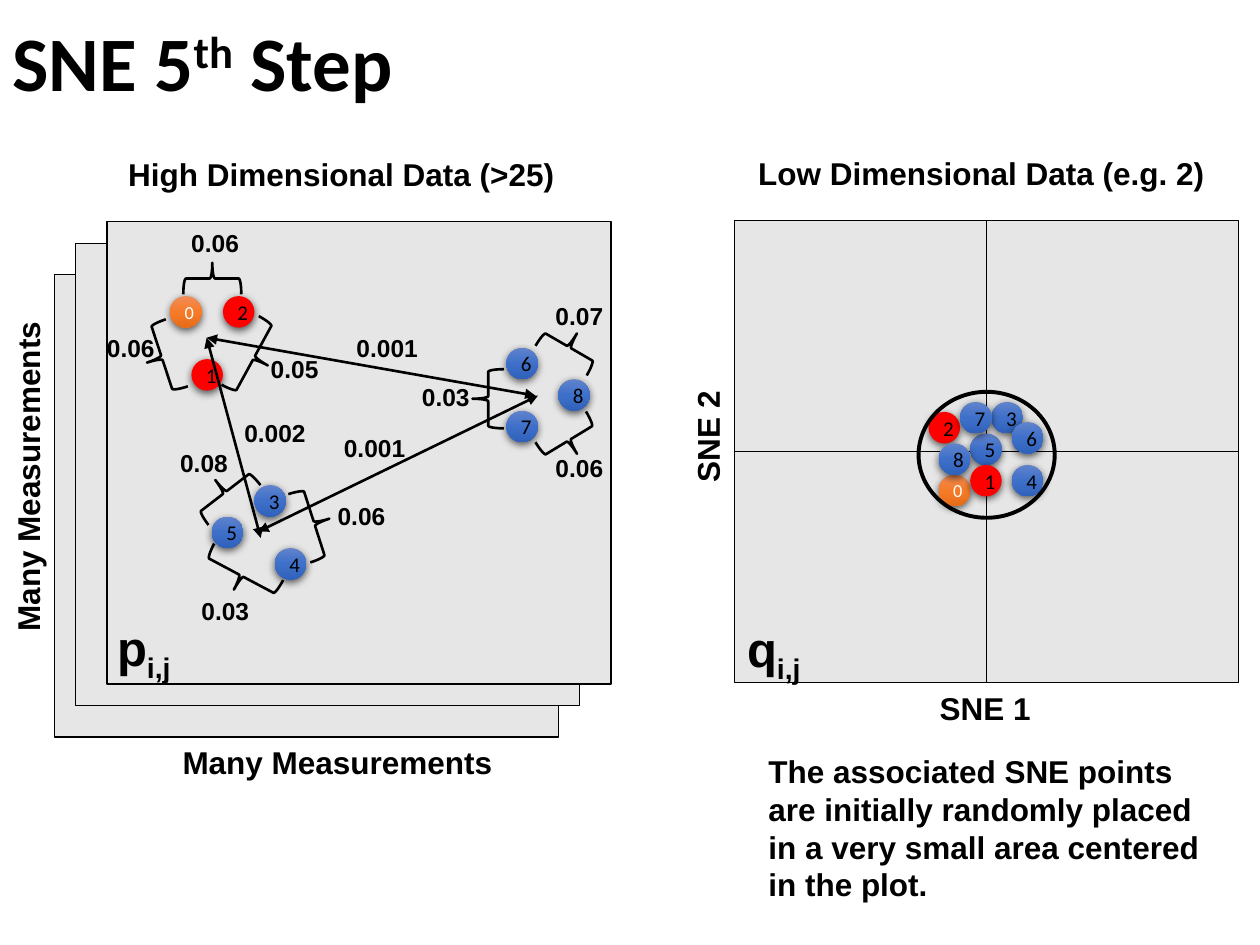
"""Build the slide on the fifth step of SNE: high and low dimensional data side by side."""
from copy import deepcopy

from lxml.etree import SubElement
from pptx import Presentation
from pptx.dml.color import RGBColor
from pptx.enum.shapes import MSO_CONNECTOR, MSO_SHAPE
from pptx.enum.text import MSO_ANCHOR, PP_ALIGN
from pptx.oxml.ns import qn
from pptx.util import Pt

BLACK = RGBColor(0x00, 0x00, 0x00)
WHITE = RGBColor(0xFF, 0xFF, 0xFF)
GREY = RGBColor(0xE7, 0xE6, 0xE6)
RED = [RGBColor(0xFF, 0x00, 0x00)]
ORANGE = [RGBColor(0xF1, 0x8C, 0x57), RGBColor(0xF6, 0x7B, 0x28), RGBColor(0xE5, 0x6C, 0x19)]
BLUE = [RGBColor(0x61, 0x83, 0xCB), RGBColor(0x3E, 0x70, 0xCA), RGBColor(0x30, 0x62, 0xBB)]

DOT_SIZE = 18
BRACE_WIDTH = 18
PLANE_SIZE = (288, 264.2)
DOT_COLORS = {0: ORANGE, 1: RED, 2: RED}

TITLE = [("SNE 5", 0), ("th", 30), (" Step", 0)]
SUBSCRIPT = ("i,j", -25)
SYMBOLS = [("p", 59.8, 349.2), ("q", 419.8, 349.9)]
EXPLANATION = [
    "The associated SNE points",
    "are initially randomly placed",
    "in a very small area centered",
    "in the plot.",
]
CAPTIONS = [
    ("High Dimensional Data (>25)", 66.2, 85, 260.6, 0),
    ("Low Dimensional Data (e.g. 2)", 426.2, 84.2, 272.2, 0),
    ("Many Measurements", 97.2, 421.2, 193, 0),
    ("Many Measurements", -80.6, 257, 193, 270),
    ("SNE 1", 529.9, 390.2, 67, 0),
    ("SNE 2", 370.8, 234.7, 67, 270),
]
STACKED_PLANES = [(31, 157), (43.2, 139), (61.2, 126.7)]
SNE_PLANE = (419.8, 126)
SNE_AREA = (524.9, 223.9, 77.8, 72)

DATA_DOTS = [
    (0, 97.2, 169.2), (5, 121, 295.2), (2, 127.4, 169.2),
    (3, 145.4, 277.2), (4, 157, 313.2), (6, 289.4, 198.7),
    (7, 289.4, 234.7), (8, 319, 216.7), (1, 109.4, 205.2),
]
SNE_DOTS = [
    (0, 536.4, 271.4), (5, 554.4, 247.7), (2, 530.6, 235.4),
    (3, 566.6, 229.7), (4, 578.2, 265.7), (6, 578.2, 241.2),
    (7, 548.6, 229.7), (8, 536.4, 253.4), (1, 554.4, 265.7),
]
BRACES = [
    (83.5, 184.3, 40.3, 341.8), (112.3, 142.6, 33.1, 90), (136.1, 182.2, 44.6, 208.6),
    (128.9, 306.7, 44.6, 298), (170.6, 278.6, 41, 162.2), (119.5, 262.8, 37.4, 52.5),
    (316.1, 181.4, 33.8, 120.1), (316.1, 234.7, 33.8, 238.8), (270, 211, 33.8, 0),
]
PROBABILITIES = [
    ("0.06", 102.2, 126.7), ("0.06", 54, 186.5), ("0.05", 147.6, 198.7),
    ("0.08", 95.8, 252.7), ("0.06", 185.8, 283), ("0.03", 108, 337),
    ("0.07", 310.3, 168.5), ("0.06", 310.3, 255.6), ("0.03", 234, 214.6),
    ("0.002", 132.5, 235.4), ("0.001", 189.4, 244.1), ("0.001", 196.6, 186.5),
]
CLUSTER_ARROWS = [
    (118.1, 193, 149, 307.4),
    (147.6, 303.8, 307.4, 226.1),
    (118.1, 193, 306, 226.1),
]


def style_font(font, size, name="Arial", color=BLACK, bold=True):
    font.size, font.name, font.bold = Pt(size), name, bold
    font.color.rgb = color


def add_text(slide, paragraphs, left, top, width, height, size, font_name="Arial", wrap=False):
    box = slide.shapes.add_textbox(Pt(left), Pt(top), Pt(width), Pt(height))
    frame = box.text_frame
    frame.word_wrap = wrap
    for index, spans in enumerate(paragraphs):
        para = frame.add_paragraph() if index else frame.paragraphs[0]
        for text, baseline in spans:
            span = para.add_run()
            span.text = text
            style_font(span.font, size, font_name)
            if baseline:
                span._r.get_or_add_rPr().set("baseline", str(baseline * 1000))
    return box


def add_outline(slide, kind, left, top, width, height, line_width, fill=None):
    shape = slide.shapes.add_shape(kind, Pt(left), Pt(top), Pt(width), Pt(height))
    shape.shadow.inherit = False
    shape.line.color.rgb = BLACK
    shape.line.width = Pt(line_width)
    if fill is None:
        shape.fill.background()
    else:
        shape.fill.solid()
        shape.fill.fore_color.rgb = fill
    return shape


def add_line(slide, start_x, start_y, end_x, end_y, width, arrowheads=False):
    line = slide.shapes.add_connector(
        MSO_CONNECTOR.STRAIGHT, Pt(start_x), Pt(start_y), Pt(end_x), Pt(end_y))
    line.line.color.rgb = BLACK
    line.line.width = Pt(width)
    properties = line._element.spPr
    SubElement(properties, qn("a:effectLst"))
    if arrowheads:
        for tag in ("a:headEnd", "a:tailEnd"):
            SubElement(properties.find(qn("a:ln")), qn(tag), type="triangle")
    return line


def fill_dot(dot, colors):
    if len(colors) == 1:
        dot.fill.solid()
        dot.fill.fore_color.rgb = colors[0]
        return
    dot.fill.gradient()
    dot.fill.gradient_angle = 270
    stop_list = dot._element.spPr.find(qn("a:gradFill")).find(qn("a:gsLst"))
    stop_list.insert(1, deepcopy(stop_list[0]))
    for index, (stop, color) in enumerate(zip(dot.fill.gradient_stops, colors)):
        stop.position = index / 2
        stop.color.rgb = color


def add_dot(slide, number, left, top):
    dot = slide.shapes.add_shape(
        MSO_SHAPE.OVAL, Pt(left), Pt(top), Pt(DOT_SIZE), Pt(DOT_SIZE))
    fill_dot(dot, DOT_COLORS.get(number, BLUE))
    dot.line.fill.background()
    dot.shadow.inherit = False
    effects = dot._element.spPr.find(qn("a:effectLst"))
    shadow = SubElement(effects, qn("a:outerShdw"), blurRad=str(Pt(4.5)),
                        dist=str(Pt(1.5)), dir="5400000", algn="ctr", rotWithShape="0")
    shade = SubElement(shadow, qn("a:srgbClr"), val=str(BLACK))
    SubElement(shade, qn("a:alpha"), val="63000")
    frame = dot.text_frame
    frame.text = str(number)
    frame.vertical_anchor = MSO_ANCHOR.MIDDLE
    para = frame.paragraphs[0]
    para.alignment = PP_ALIGN.CENTER
    size, color = (12, BLACK) if number else (10.5, WHITE)
    style_font(para.runs[0].font, size, "Calibri", color, False)


def main():
    deck = Presentation()
    deck.slide_width, deck.slide_height = Pt(720), Pt(540)
    slide = deck.slides.add_slide(deck.slide_layouts[6])

    title = add_text(slide, [TITLE], 0, 0, 648, 76.3, 44, "Calibri", True)
    title.text_frame.vertical_anchor = MSO_ANCHOR.MIDDLE
    title.text_frame.paragraphs[0].line_spacing = 0.9

    for corner in STACKED_PLANES:
        add_outline(slide, MSO_SHAPE.RECTANGLE, *corner, *PLANE_SIZE, 0.75, GREY)
    plane = add_outline(slide, MSO_SHAPE.RECTANGLE, *SNE_PLANE, *PLANE_SIZE, 0.75, GREY)
    for first_side, last_side in ((1, 3), (0, 2)):
        axis = add_line(slide, 0, 0, 0, 0, 0.75)
        axis.begin_connect(plane, first_side)
        axis.end_connect(plane, last_side)

    for text, left, top, width, rotation in CAPTIONS:
        add_text(slide, [[(text, 0)]], left, top, width, 29, 18).rotation = rotation
    for letter, left, top in SYMBOLS:
        add_text(slide, [[(letter, 0), SUBSCRIPT]], left, top, 47.5, 41, 28)
    add_text(slide, [[(text, 0)] for text in EXPLANATION], 432, 426.2, 262.8, 94.3, 18, wrap=True)

    for dot in DATA_DOTS + SNE_DOTS:
        add_dot(slide, *dot)
    add_outline(slide, MSO_SHAPE.OVAL, *SNE_AREA, 2.25)
    for left, top, height, rotation in BRACES:
        brace = add_outline(slide, MSO_SHAPE.LEFT_BRACE, left, top, BRACE_WIDTH, height, 1.5)
        brace.rotation = rotation
    for arrow in CLUSTER_ARROWS:
        add_line(slide, *arrow, 1.5, arrowheads=True)
    for text, left, top in PROBABILITIES:
        width = 41.8 if len(text) == 4 else 49.7
        add_text(slide, [[(text, 0)]], left, top, width, 24.5, 14)

    deck.save("out.pptx")


if __name__ == "__main__":
    main()
